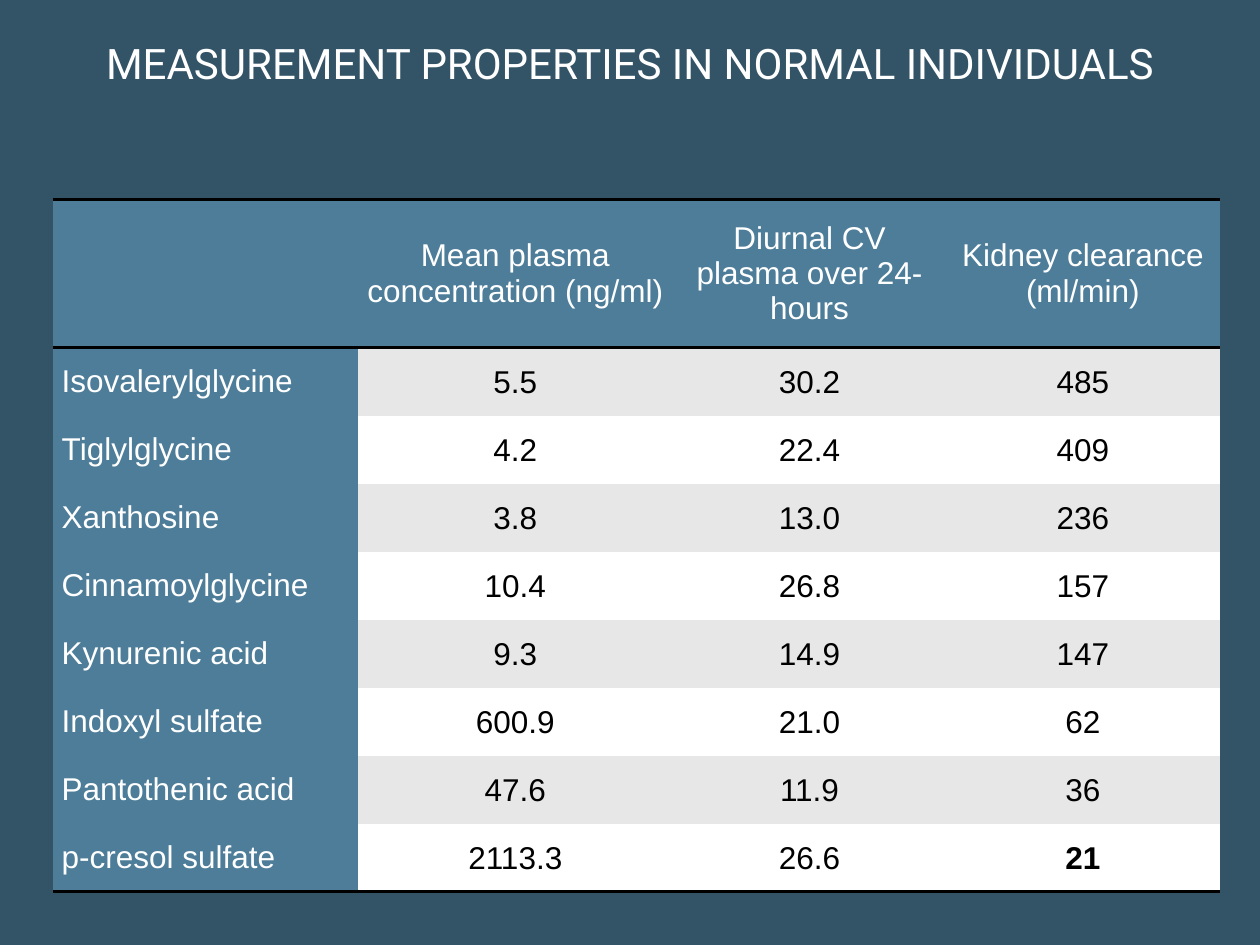
from lxml.etree import SubElement
from pptx import Presentation
from pptx.dml.color import RGBColor
from pptx.enum.text import MSO_ANCHOR as Anchor, PP_ALIGN as Align
from pptx.oxml.ns import qn
from pptx.util import Inches, Pt

COLORS = {"page": "335366", "head": "4D7D99", "band": "E7E7E7",
          "white": "FFFFFF", "black": "000000"}
NO_GRID_STYLE = "{2D5ABB26-0587-4C30-8999-92F81FD0307C}"
TITLE_BOX = (0, 0.25, 10, 0.5)
TABLE_BOX = (0.42, 1.58, 9.25, 5.5)
COLUMN_WIDTHS = (2.42, 2.5, 2.17, 2.17)
HEADER_HEIGHT = 1.18
ROWS = [
    ("", "Mean plasma concentration (ng/ml)", "Diurnal CV plasma over 24-hours",
     "Kidney clearance (ml/min)"),
    ("Isovalerylglycine", "5.5", "30.2", "485"),
    ("Tiglylglycine", "4.2", "22.4", "409"),
    ("Xanthosine", "3.8", "13.0", "236"),
    ("Cinnamoylglycine", "10.4", "26.8", "157"),
    ("Kynurenic acid", "9.3", "14.9", "147"),
    ("Indoxyl sulfate", "600.9", "21.0", "62"),
    ("Pantothenic acid", "47.6", "11.9", "36"),
    ("p-cresol sulfate", "2113.3", "26.6", "21"),
]


def color(name):
    """Return the named colour."""
    return RGBColor.from_string(COLORS[name])


def format_text(para, font, size, tone, align, bold=False):
    """Align a paragraph and format its runs."""
    para.alignment = align
    for span in para.runs:
        span.font.name, span.font.size, span.font.bold = font, Pt(size), bold
        span.font.color.rgb = color(tone)


def add_rule(cell, side):
    """Draw a black border along one side of a cell."""
    line = SubElement(cell._tc.get_or_add_tcPr(), qn(f"a:ln{side}"), w=str(Pt(2)))
    fill = SubElement(line, qn("a:solidFill"))
    SubElement(fill, qn("a:srgbClr"), val=COLORS["black"])


def place_title(page, box):
    """Place the slide title in the box."""
    title = page.shapes.title
    title.left, title.top, title.width, title.height = map(Inches, box)
    frame = title.text_frame
    frame.text = "MEASUREMENT PROPERTIES IN NORMAL INDIVIDUALS"
    frame.word_wrap, frame.vertical_anchor = True, Anchor.BOTTOM
    format_text(frame.paragraphs[0], "Roboto", 24, "white", Align.CENTER)


def fill_cell(cell, text, row, column):
    """Write and style one cell according to its place in the table."""
    is_head = row == 0 or column == 0
    is_last = row == len(ROWS) - 1
    if row == 0:
        add_rule(cell, "T")
    if row == 0 or is_last:
        add_rule(cell, "B")
    cell.fill.solid()
    cell.fill.fore_color.rgb = color("head" if is_head else "band" if row % 2 else "white")
    cell.vertical_anchor = Anchor.MIDDLE
    cell.margin_left = cell.margin_right = Inches(0.07 if is_head else 0)
    cell.margin_top = cell.margin_bottom = 0
    para = cell.text_frame.paragraphs[0]
    para.text = text
    if not is_head:
        para.line_spacing = 1.07
    format_text(para, "Arial", 18, "white" if is_head else "black",
                Align.CENTER if column else Align.LEFT,
                bold=is_last and column == len(COLUMN_WIDTHS) - 1)


def place_table(page, box):
    """Place the table of measurements in the box."""
    frame = page.shapes.add_table(len(ROWS), len(COLUMN_WIDTHS), *map(Inches, box))
    table = frame.table
    table.first_row = table.horz_banding = False
    table._tbl.tblPr.find(qn("a:tableStyleId")).text = NO_GRID_STYLE
    for column, width in zip(table.columns, COLUMN_WIDTHS):
        column.width = Inches(width)
    body_height = (box[3] - HEADER_HEIGHT) / (len(ROWS) - 1)
    for row, texts in enumerate(ROWS):
        table.rows[row].height = Inches(body_height if row else HEADER_HEIGHT)
        for column, text in enumerate(texts):
            fill_cell(table.cell(row, column), text, row, column)


def main():
    """Build and save the slide."""
    deck = Presentation()
    deck.slide_width, deck.slide_height = Inches(10), Inches(7.5)
    page = deck.slides.add_slide(deck.slide_layouts[5])
    page.background.fill.solid()
    page.background.fill.fore_color.rgb = color("page")
    place_title(page, TITLE_BOX)
    place_table(page, TABLE_BOX)
    deck.save("out.pptx")


if __name__ == "__main__":
    main()
